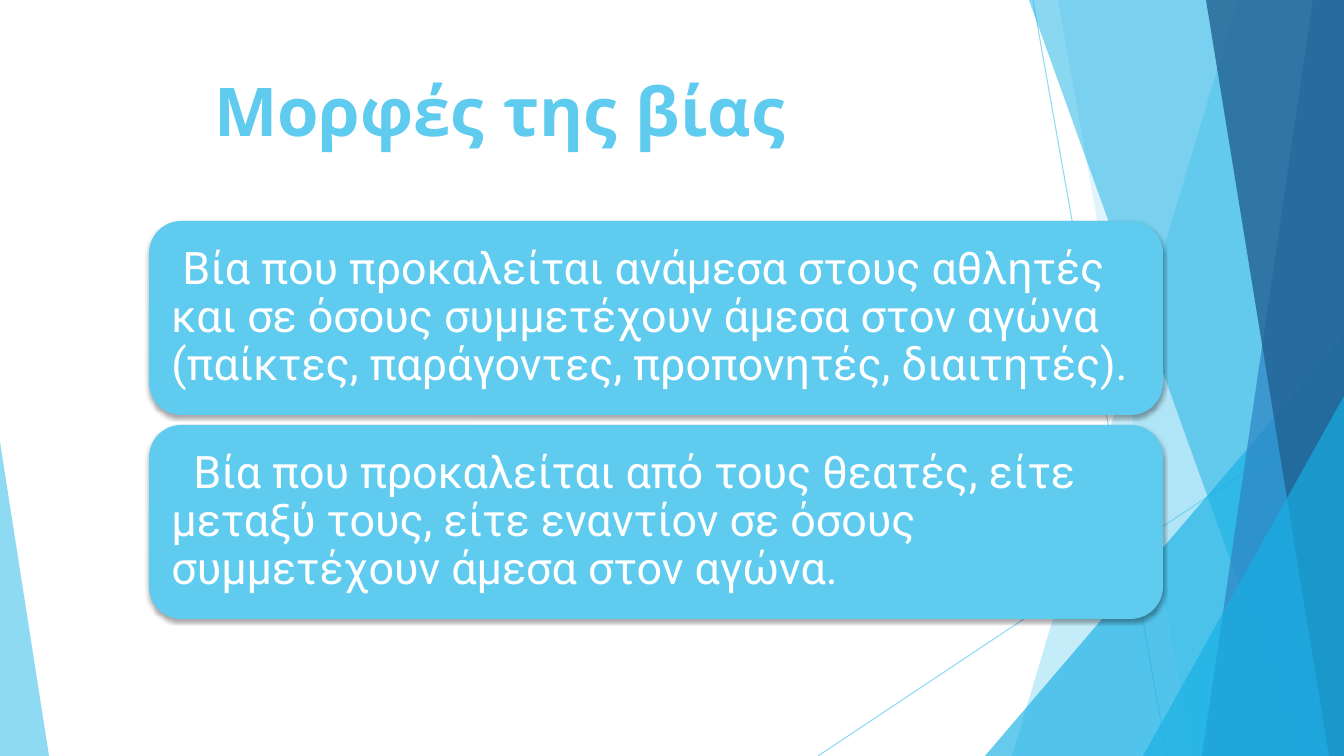
from lxml import etree
from pptx import Presentation
from pptx.dml.color import RGBColor
from pptx.enum.shapes import MSO_CONNECTOR, MSO_SHAPE
from pptx.enum.text import MSO_ANCHOR, MSO_AUTO_SIZE, PP_ALIGN
from pptx.oxml import parse_xml
from pptx.oxml.ns import nsdecls, qn
from pptx.util import Pt

STRAIGHT = MSO_CONNECTOR.STRAIGHT
TRIANGLE = MSO_SHAPE.ISOSCELES_TRIANGLE
ROUNDED = MSO_SHAPE.ROUNDED_RECTANGLE
TOP, MIDDLE = MSO_ANCHOR.TOP, MSO_ANCHOR.MIDDLE
LEFT = PP_ALIGN.LEFT
NO_AUTOFIT = MSO_AUTO_SIZE.NONE

SKY = RGBColor(0x5F, 0xCB, 0xEF)
CYAN = RGBColor(0x17, 0xB0, 0xE4)
BLUE = RGBColor(0x2E, 0x83, 0xC3)
NAVY = RGBColor(0x22, 0x62, 0x92)
WHITE = RGBColor(0xFF, 0xFF, 0xFF)

EMU_PER_PX = 914400 / 100.8
PAGE_WIDTH, PAGE_HEIGHT = 1344, 756
TITLE_ONLY = 5

RAYS = [(1033, 0, 1167, 756), (1344, 406, 818, 756)]
BACK_FACETS = [(1238, 1012, SKY, 36), (1058, 1192, SKY, 20)]
FRONT_FACETS = [
    (1029, 1301, CYAN, 50),
    (1313, 1202, BLUE, 70),
    (1206, 1329, NAVY, 80),
]
CARD_LEFT, CARD_TOP, CARD_WIDTH, CARD_HEIGHT = 149, 221, 1014, 194
CARD_STEP = 204
CARD_INSET = 13
CARDS = [
    ("Βία που προκαλείται ανάμεσα στους αθλητές και σε όσους συμμετέχουν "
     "άμεσα στον αγώνα (παίκτες, παράγοντες, προπονητές, διαιτητές).", 11),
    ("Βία που προκαλείται από τους θεατές, είτε μεταξύ τους, είτε εναντίον "
     "σε όσους συμμετέχουν άμεσα στον αγώνα.", 22),
]


def px(length):
    return round(length * EMU_PER_PX)


def set_alpha(fill_parent, percent):
    color = fill_parent.find(f"{qn('a:solidFill')}/{qn('a:srgbClr')}")
    etree.SubElement(color, qn("a:alpha"), val=str(percent * 1000))


def paint(shape, color):
    shape.shadow.inherit = False
    shape.line.fill.background()
    shape.fill.solid()
    shape.fill.fore_color.rgb = color


def paint_clear(shape, color, alpha):
    paint(shape, color)
    set_alpha(shape.element.spPr, alpha)


def add_ray(page, start_x, start_y, end_x, end_y):
    ray = page.shapes.add_connector(
        STRAIGHT, px(start_x), px(start_y), px(end_x), px(end_y))
    ray.line.color.rgb = SKY
    ray.line.width = Pt(0.75)
    properties = ray.element.spPr
    set_alpha(properties.find(qn("a:ln")), 70)
    etree.SubElement(properties, qn("a:effectLst"))


def add_facet(page, top_x, bottom_x, color, alpha):
    builder = page.shapes.build_freeform(top_x, 0, scale=EMU_PER_PX)
    builder.add_line_segments([
        (PAGE_WIDTH, 0), (PAGE_WIDTH, PAGE_HEIGHT), (bottom_x, PAGE_HEIGHT)])
    paint_clear(builder.convert_to_shape(), color, alpha)


def add_corner(page, left, top, width, apex, color, alpha):
    corner = page.shapes.add_shape(
        TRIANGLE, px(left), px(top), px(width), px(PAGE_HEIGHT - top))
    corner.adjustments[0] = apex
    paint_clear(corner, color, alpha)


def add_text(para, text, font_name, size, color, bold=False):
    para.alignment = LEFT
    span = para.add_run()
    span.text = text
    span.font.name = font_name
    span.font.size = Pt(size)
    span.font.bold = bold
    span.font.color.rgb = color


def add_soft_shadow(shape):
    effects = parse_xml(
        f'<a:effectLst {nsdecls("a")}>'
        f'<a:outerShdw blurRad="{Pt(3)}" dist="{Pt(2)}" dir="5400000" rotWithShape="0">'
        '<a:srgbClr val="000000"><a:alpha val="35000"/></a:srgbClr>'
        '</a:outerShdw></a:effectLst>')
    properties = shape.element.spPr
    properties.replace(properties.find(qn("a:effectLst")), effects)


def add_card(page, top, text, indent):
    card = page.shapes.add_shape(
        ROUNDED, px(CARD_LEFT), px(top), px(CARD_WIDTH), px(CARD_HEIGHT))
    paint(card, SKY)
    add_soft_shadow(card)
    frame = card.text_frame
    frame.word_wrap = True
    frame.vertical_anchor = MIDDLE
    frame.margin_left = frame.margin_right = px(CARD_INSET)
    frame.margin_top = frame.margin_bottom = px(CARD_INSET)
    para = frame.paragraphs[0]
    para.line_spacing = 0.9
    add_text(para, text, "Roboto", 32, WHITE)
    properties = para._p.get_or_add_pPr()
    properties.set("marL", "0")
    properties.set("indent", str(px(indent)))


def set_title(page, text):
    title = page.shapes.title
    title.left, title.top = px(204), px(64)
    title.width, title.height = px(1075), px(145)
    frame = title.text_frame
    frame.auto_size = NO_AUTOFIT
    frame.vertical_anchor = TOP
    add_text(frame.paragraphs[0], text, "Montserrat", 48, SKY, bold=True)


def add_backdrop(page):
    for ray in RAYS:
        add_ray(page, *ray)
    for facet in BACK_FACETS:
        add_facet(page, *facet)
    add_corner(page, 985, 336, 359, 1, CYAN, 66)
    for facet in FRONT_FACETS:
        add_facet(page, *facet)
    add_corner(page, 1143, 396, 201, 1, CYAN, 66)
    add_corner(page, 0, 442, 49, 0, SKY, 70)


def main():
    deck = Presentation()
    deck.slide_width, deck.slide_height = px(PAGE_WIDTH), px(PAGE_HEIGHT)
    page = deck.slides.add_slide(deck.slide_layouts[TITLE_ONLY])
    add_backdrop(page)
    set_title(page, "Μορφές της βίας")
    for row, (text, indent) in enumerate(CARDS):
        add_card(page, CARD_TOP + row * CARD_STEP, text, indent)
    deck.save("out.pptx")


if __name__ == "__main__":
    main()
